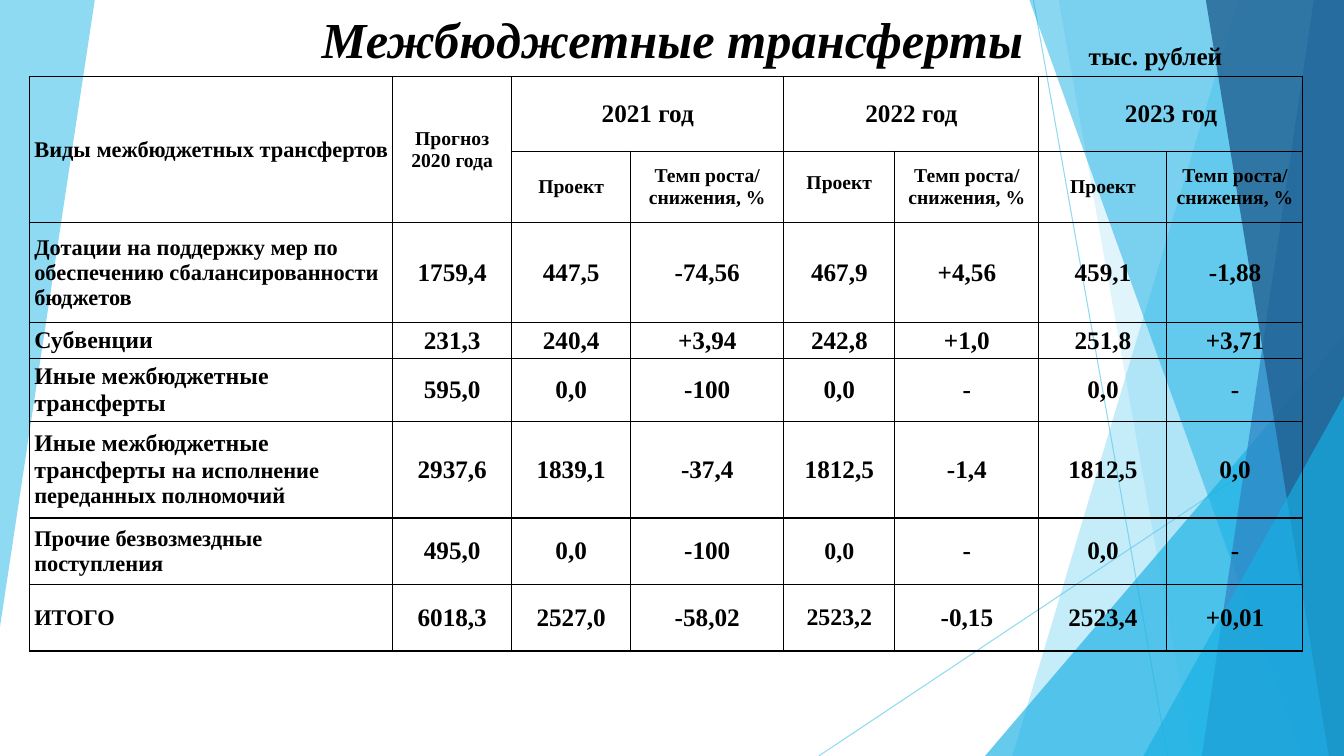
"""Build the slide on intergovernmental transfers: faceted backdrop, title and table."""
import pptx
import pptx.util
import pptx.dml.color
import pptx.enum.shapes
import pptx.enum.text
import pptx.oxml
import pptx.oxml.ns
from lxml import etree

RGB = pptx.dml.color.RGBColor
KIND = pptx.enum.shapes.MSO_SHAPE
ALIGN = pptx.enum.text.PP_ALIGN
ANCHOR = pptx.enum.text.MSO_ANCHOR
qn = pptx.oxml.ns.qn
NS = 'xmlns:a="http://schemas.openxmlformats.org/drawingml/2006/main"'

PX = 9144
WIDE, HIGH = 1333, 750
FONT = "Times New Roman"
BLACK = RGB(0x00, 0x00, 0x00)
SKY = RGB(0x5F, 0xCB, 0xEF)
CYAN = RGB(0x17, 0xB0, 0xE4)
BLUE = RGB(0x2E, 0x83, 0xC3)
NAVY = RGB(0x22, 0x62, 0x92)


def text(frame, words, size=18, align=ALIGN.CENTER, italic=False):
    """Fill a frame; words is a string with line ends, or a list of (string, size)."""
    lines = [[(line, size)] for line in words.split("\n")] if isinstance(words, str) else [words]
    for n, line in enumerate(lines):
        para = frame.add_paragraph() if n else frame.paragraphs[0]
        para.alignment = align
        for part, points in line:
            run = para.add_run()
            run.text = part
            run.font.name = FONT
            run.font.size = pptx.util.Pt(points)
            run.font.bold = True
            run.font.italic = italic
            run.font.color.rgb = BLACK


def fade(shape, alpha):
    """Set the opacity, in percent, of a shape's colour."""
    color = next(shape._element.spPr.iter(qn("a:srgbClr")))
    etree.SubElement(color, qn("a:alpha")).set("val", str(alpha * 1000))


deck = pptx.Presentation()
deck.slide_width = WIDE * PX
deck.slide_height = HIGH * PX
slide = deck.slides.add_slide(deck.slide_layouts[6])
shapes = slide.shapes

facets = [
    ("free", SKY, 70, [(0, 0), (94, 0), (0, 622)]),
    ("line", SKY, 70, [(1025, 0), (1158, HIGH)]),
    ("line", SKY, 70, [(WIDE, 403), (812, HIGH)]),
    ("shard", SKY, 36, (1228, 1004)),
    ("shard", SKY, 20, (1050, 1183)),
    ("peak", CYAN, 66, (977, 333)),
    ("shard", CYAN, 50, (1021, 1291)),
    ("shard", BLUE, 70, (1303, 1192)),
    ("shard", NAVY, 80, (1196, 1318)),
    ("peak", CYAN, 66, (1134, 393)),
]
for kind, color, alpha, spots in facets:
    if kind == "line":
        (x1, y1), (x2, y2) = spots
        facet = shapes.add_connector(
            pptx.enum.shapes.MSO_CONNECTOR.STRAIGHT, x1 * PX, y1 * PX, x2 * PX, y2 * PX)
        facet.line.color.rgb = color
        facet.line.width = pptx.util.Pt(0.75)
        etree.SubElement(facet._element.spPr, qn("a:effectLst"))
    else:
        if kind == "peak":
            left, top = spots
            facet = shapes.add_shape(
                KIND.ISOSCELES_TRIANGLE, left * PX, top * PX, (WIDE - left) * PX, (HIGH - top) * PX)
            facet.adjustments[0] = 1
        else:
            if kind == "shard":
                top, base = spots
                spots = [(top, 0), (WIDE, 0), (WIDE, HIGH), (base, HIGH)]
            path = shapes.build_freeform(*spots[0], scale=PX)
            path.add_line_segments(spots[1:], close=True)
            facet = path.convert_to_shape()
        facet.shadow.inherit = False
        facet.fill.solid()
        facet.fill.fore_color.rgb = color
        facet.line.fill.background()
    fade(facet, alpha)

title = shapes.add_shape(KIND.ROUNDED_RECTANGLE, 167 * PX, 0, 1000 * PX, 76 * PX)
title.shadow.inherit = False
title.fill.background()
title.line.fill.background()
frame = title.text_frame
frame.margin_left = frame.margin_right = frame.margin_top = frame.margin_bottom = 0
frame.vertical_anchor = ANCHOR.MIDDLE
frame.word_wrap = True
text(frame, "Межбюджетные трансферты", size=36, italic=True)
props = frame.paragraphs[0].runs[0].font._element
glow = pptx.oxml.parse_xml(
    f'<a:effectLst {NS}><a:outerShdw blurRad="38100" dist="38100" dir="2700000">'
    '<a:srgbClr val="000000"><a:alpha val="43000"/></a:srgbClr></a:outerShdw></a:effectLst>')
props.find(qn("a:solidFill")).addnext(glow)

cols = [360, 118, 118, 152, 110, 143, 127, 135]
heights = [74, 71, 99, 36, 62, 96, 66, 66]
rate = "Темп роста/ снижения, %"
rows = [
    ["Виды межбюджетных трансфертов", "Прогноз\n2020 года",
     "2021 год", "", "2022 год", "", "2023 год", ""],
    ["", ""] + ["Проект", rate] * 3,
    ["Дотации на поддержку мер по обеспечению сбалансированности бюджетов",
     "1759,4", "447,5", "-74,56", "467,9", "+4,56", "459,1", "-1,88"],
    [[("Субвенции", 17)], "231,3", "240,4", "+3,94", "242,8", "+1,0", "251,8", "+3,71"],
    [[("Иные межбюджетные трансферты", 17)], "595,0", "0,0", "-100", "0,0", "-", "0,0", "-"],
    [[("Иные межбюджетные трансферты ", 17), ("на исполнение переданных полномочий", 16)],
     "2937,6", "1839,1", "-37,4", "1812,5", "-1,4", "1812,5", "0,0"],
    ["Прочие безвозмездные поступления",
     "495,0", "0,0", "-100", [("0,0", 17)], "-", "0,0", "-"],
    ["ИТОГО", "6018,3", "2527,0", "-58,02", [("2523,2", 17)], "-0,15", "2523,4", "+0,01"],
]
holder = shapes.add_table(
    len(rows), len(cols), 29 * PX, 76 * PX, sum(cols) * PX, sum(heights) * PX)
table = holder.table
table.first_row = table.horz_banding = False
for n, width in enumerate(cols):
    table.columns[n].width = width * PX
for n, height in enumerate(heights):
    table.rows[n].height = height * PX
for n in (0, 1):
    table.cell(0, n).merge(table.cell(1, n))
for n in (2, 4, 6):
    table.cell(0, n).merge(table.cell(0, n + 1))

for r, row in enumerate(rows):
    for c, words in enumerate(row):
        cell = table.cell(r, c)
        cell.margin_left = 5 * PX
        cell.margin_right = 4 * PX
        cell.margin_top = cell.margin_bottom = 0
        cell.vertical_anchor = ANCHOR.MIDDLE
        cell.fill.background()
        for n, side in enumerate(("lnL", "lnR", "lnT", "lnB")):
            edge = pptx.oxml.parse_xml(
                f'<a:{side} {NS} w="12700"><a:solidFill><a:srgbClr val="{BLACK}"/>'
                f'</a:solidFill><a:prstDash val="solid"/></a:{side}>')
            cell._tc.tcPr.insert(n, edge)
        if words:
            size = 16 if c == 0 else 14 if r == 1 or (r, c) == (0, 1) else 18
            align = ALIGN.LEFT if c == 0 and r > 1 else ALIGN.CENTER
            text(cell.text_frame, words, size=size, align=align)
raised = table.cell(1, 4)
raised.vertical_anchor = ANCHOR.TOP
raised.margin_top = 21 * PX

unit = shapes.add_textbox(1070 * PX, 35 * PX, 154 * PX, 40 * PX)
unit.text_frame.word_wrap = False
unit.text_frame.auto_size = pptx.enum.text.MSO_AUTO_SIZE.SHAPE_TO_FIT_TEXT
text(unit.text_frame, "тыс. рублей", align=ALIGN.LEFT)

deck.save("out.pptx")
